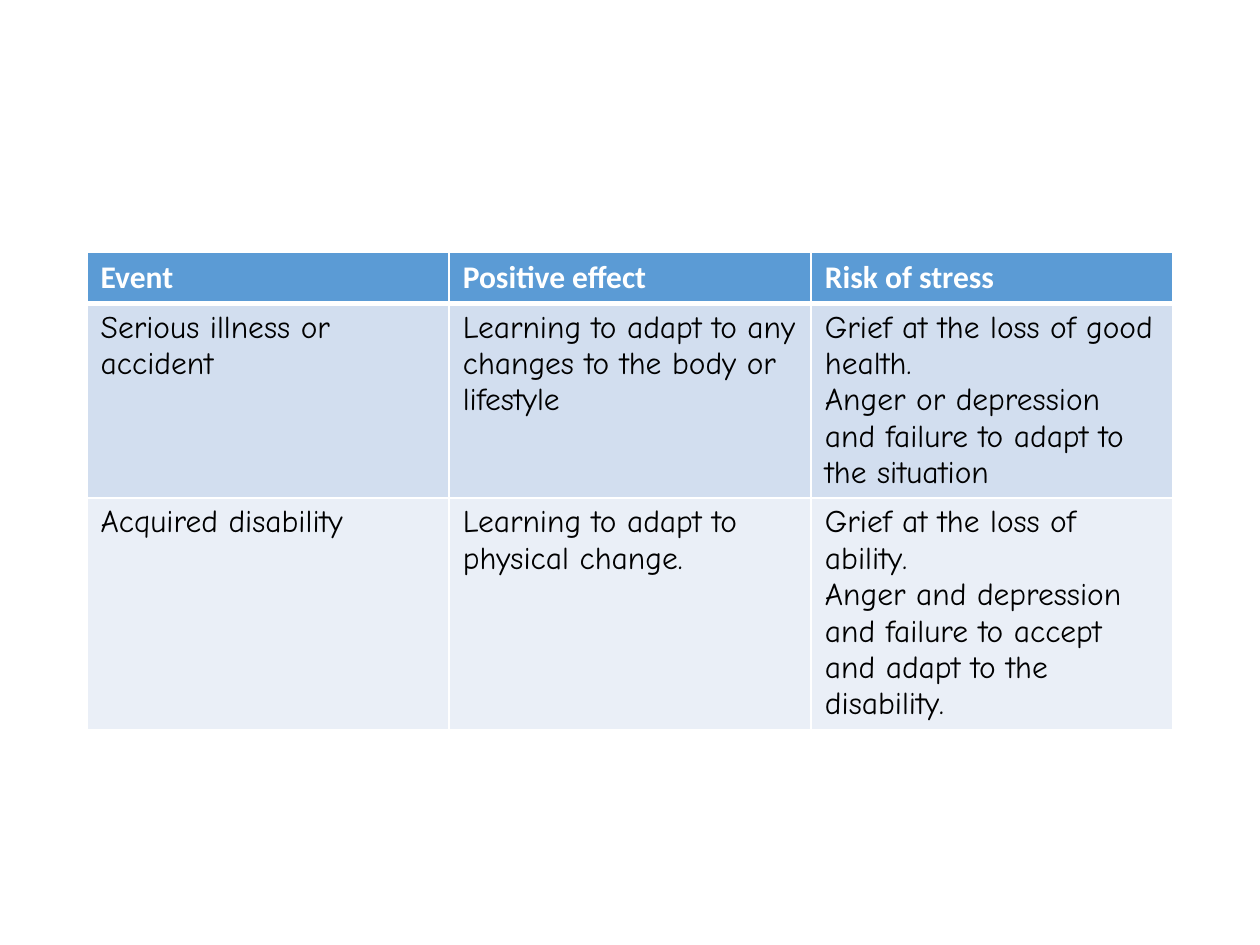
from lxml import etree
from pptx import Presentation
from pptx import util as u
from pptx.dml.color import RGBColor
from pptx.oxml import ns

COLORS = {
    "header": "5B9BD5",
    "odd": "D2DEEF",
    "even": "EAEFF7",
    "border": "FFFFFF",
    "header_text": "FFFFFF",
    "body_text": "000000",
}

ROWS = [
    [["Event"], ["Positive effect"], ["Risk of stress"]],
    [
        ["Serious illness or accident"],
        ["Learning to adapt to any changes to the body or lifestyle"],
        ["Grief at the loss of good health.",
         "Anger or depression and failure to adapt to the situation"],
    ],
    [
        ["Acquired disability"],
        ["Learning to adapt to physical change."],
        ["Grief at the loss of ability.",
         "Anger and depression and failure to accept and adapt to the disability."],
    ],
]


class Deck:
    """Holds the table style and the current slide."""

    header_font = "Calibri"
    body_font = "Comic Neue"
    size = u.Pt(18)

    def __init__(self, prs):
        self.s = prs.slides.add_slide(prs.slide_layouts[6])

    def border(self, cell, side, width):
        """Draw one cell border; side is L, R, T or B."""
        tc_pr = cell._tc.get_or_add_tcPr()
        ln = etree.SubElement(tc_pr, ns.qn(f"a:ln{side}"), w=str(u.Pt(width)))
        fill = etree.SubElement(ln, ns.qn("a:solidFill"))
        etree.SubElement(fill, ns.qn("a:srgbClr"), val=COLORS["border"])

    def cell(self, cell, paragraphs, row):
        header = row == 0
        widths = {"L": 1, "R": 1, "T": 3 if row == 1 else 1, "B": 3 if header else 1}
        for side, width in widths.items():
            self.border(cell, side, width)
        fill = "header" if header else "odd" if row % 2 else "even"
        cell.fill.solid()
        cell.fill.fore_color.rgb = RGBColor.from_string(COLORS[fill])
        cell.margin_left = cell.margin_right = u.Cm(0.28)
        cell.margin_top = cell.margin_bottom = u.Cm(0.13)

        tf = cell.text_frame
        for i, words in enumerate(paragraphs):
            p = tf.add_paragraph() if i else tf.paragraphs[0]
            r = p.add_run()
            r.text = words
            r.font.name = self.header_font if header else self.body_font
            r.font.size = self.size
            r.font.bold = header
            color = "header_text" if header else "body_text"
            r.font.color.rgb = RGBColor.from_string(COLORS[color])

    def table(self, rows, left, top, col_width, row_height, height):
        """Add a table whose rows grow from row_height to fit their text."""
        n_cols = len(rows[0])
        frame = self.s.shapes.add_table(
            len(rows), n_cols, left, top, col_width * n_cols, height)
        tbl = frame.table
        for col in tbl.columns:
            col.width = col_width
        for i, row in enumerate(rows):
            tbl.rows[i].height = row_height
            for j, paragraphs in enumerate(row):
                self.cell(tbl.cell(i, j), paragraphs, i)
        frame.height = height


def main():
    prs = Presentation()
    prs.slide_width, prs.slide_height = u.Cm(25.4), u.Cm(19.05)
    deck = Deck(prs)
    deck.table(ROWS, u.Cm(1.75), u.Cm(5.08), u.Cm(7.3), u.Cm(1.03), u.Cm(6.68))
    prs.save("out.pptx")


if __name__ == "__main__":
    main()
